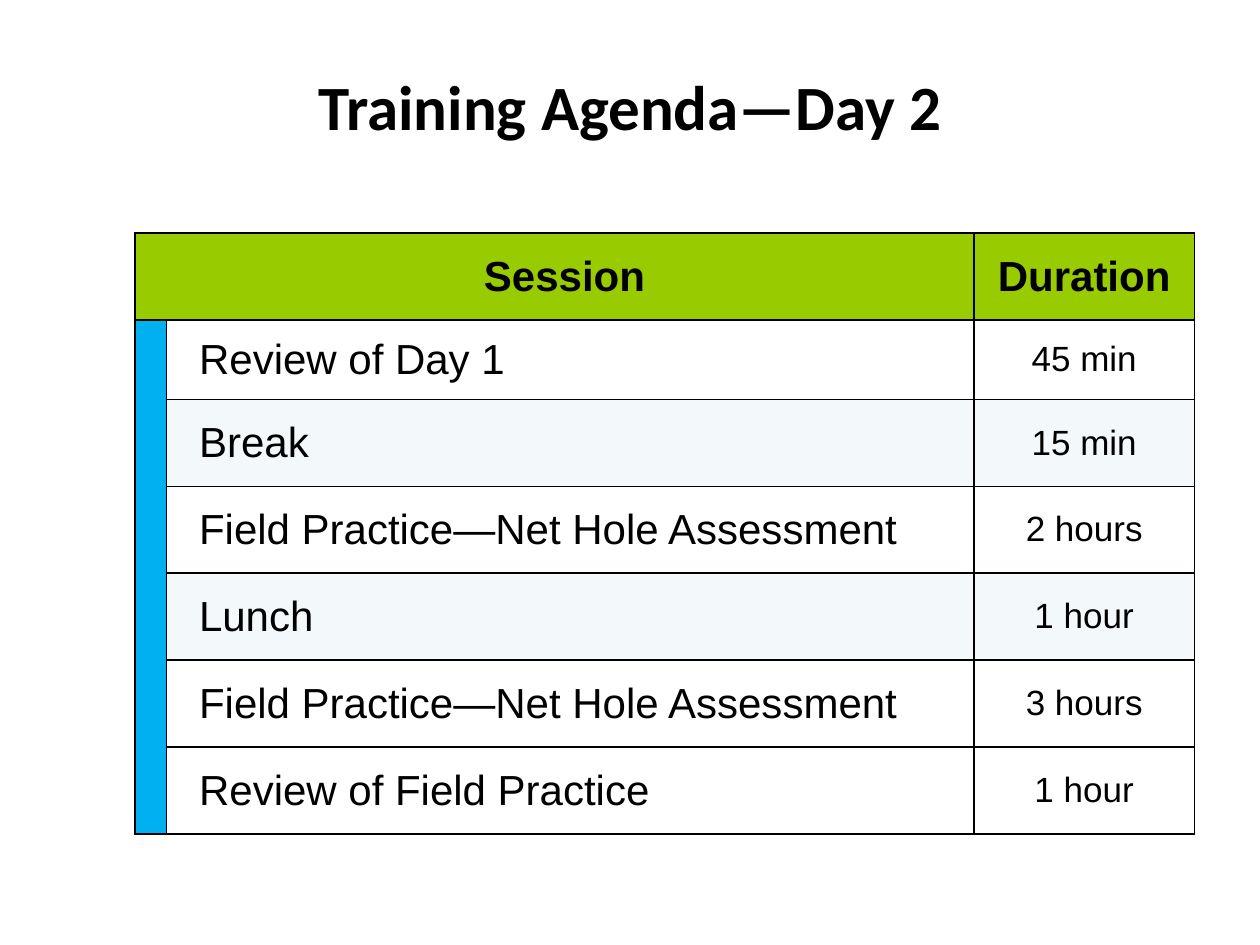
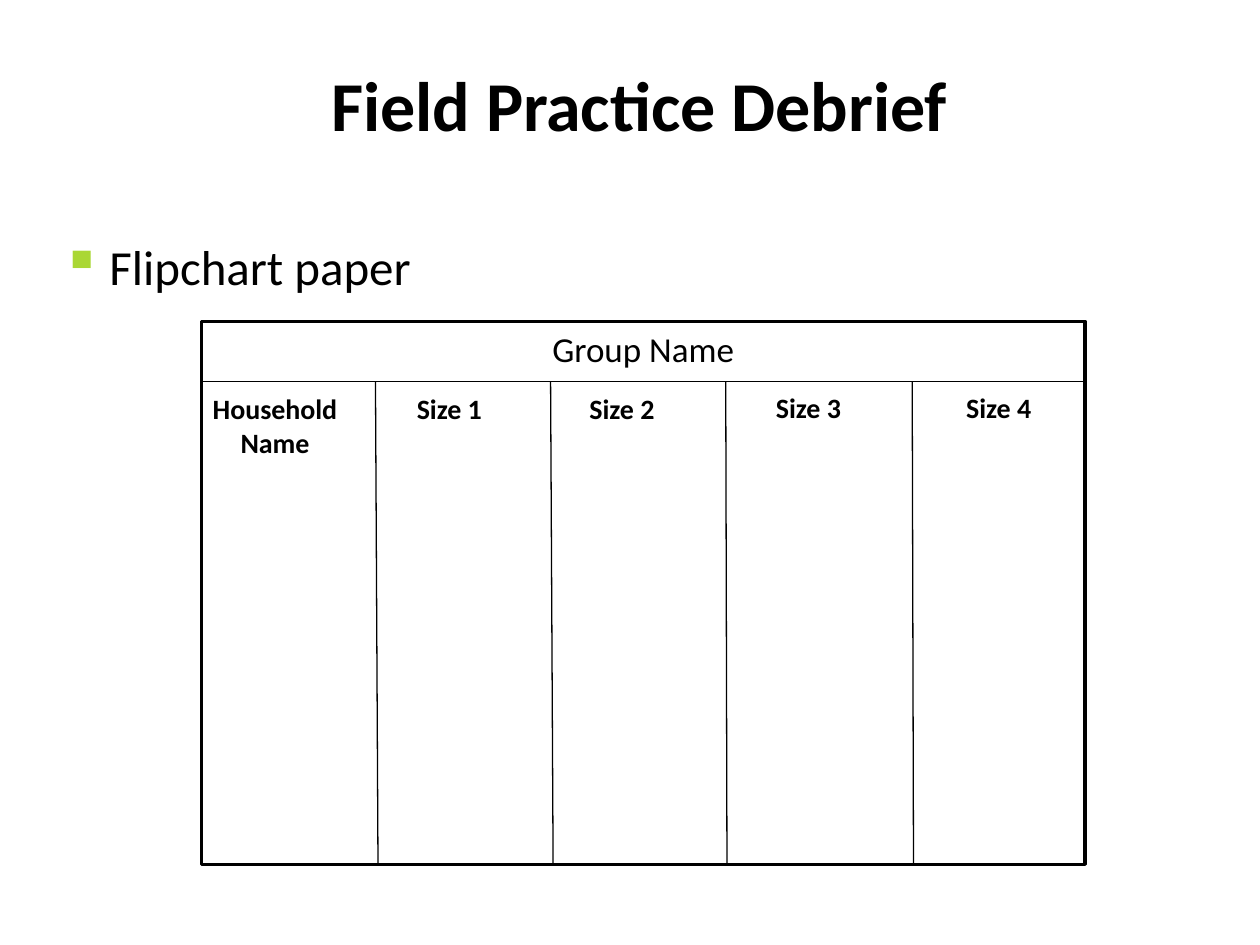
"""Build the training agenda slide and the field practice debrief slide."""
from lxml import etree
from pptx import Presentation
from pptx.dml.color import RGBColor
from pptx.enum.shapes import MSO_CONNECTOR, MSO_SHAPE
from pptx.enum.text import MSO_ANCHOR, MSO_AUTO_SIZE, PP_ALIGN
from pptx.oxml.ns import qn
from pptx.util import Inches, Pt

LEFT, CENTER = PP_ALIGN.LEFT, PP_ALIGN.CENTER
TOP, MIDDLE = MSO_ANCHOR.TOP, MSO_ANCHOR.MIDDLE
GROW = MSO_AUTO_SIZE.SHAPE_TO_FIT_TEXT
RECTANGLE, STRAIGHT = MSO_SHAPE.RECTANGLE, MSO_CONNECTOR.STRAIGHT

COLORS = {
    "ink": "000000",
    "paper": "FFFFFF",
    "header": "99CC00",
    "day_band": "00B0F0",
    "pause": "F3F9FA",
    "bullet": "AAD734",
}
HEADING_FONT, TABLE_FONT = "Calibri", "Arial"

AGENDA = [
    ("Review of Day 1", "45 min"),
    ("Break", "15 min"),
    ("Field Practice—Net Hole Assessment", "2 hours"),
    ("Lunch", "1 hour"),
    ("Field Practice—Net Hole Assessment", "3 hours"),
    ("Review of Field Practice", "1 hour"),
]
PAUSES = ("Break", "Lunch")
AGENDA_COLUMNS = (0.25, 6.41, 1.75)
HEADER_HEIGHT, FIRST_HEIGHT, SESSION_HEIGHT = 0.69, 0.63, 0.69

SHEET_LEFT, SHEET_TOP, SHEET_WIDTH, SHEET_HEIGHT = 1.6, 2.55, 7.01, 4.31
HEADING_RULE = 3.03
DIVIDERS = [(2.98, 3.0), (4.37, 4.39), (5.76, 5.77), (7.24, 7.25)]
SIZE_LABELS = [(3.21, 3.06), (4.58, 3.06), (6.06, 3.05), (7.57, 3.05)]


def color(name):
    """Return the named colour."""
    return RGBColor.from_string(COLORS[name])


def write(frame, text, size, font=HEADING_FONT, bold=False, align=LEFT):
    """Fill a text frame and format all its runs alike."""
    frame.text = text
    for paragraph in frame.paragraphs:
        paragraph.alignment = align
        for run in paragraph.runs:
            run.font.name = font
            run.font.size = Pt(size)
            run.font.bold = bold
            run.font.color.rgb = color("ink")


def add_text(shapes, box, text, size, bold=False, anchor=TOP, wrap=True):
    """Add a text box and return its frame."""
    frame = shapes.add_textbox(*map(Inches, box)).text_frame
    frame.word_wrap = wrap
    frame.vertical_anchor = anchor
    write(frame, text, size, bold=bold)
    return frame


def add_title(slide, box, text, size):
    """Add a bold slide title, centred vertically in its box."""
    add_text(slide.shapes, box, text, size, bold=True, anchor=MIDDLE)


def add_bullet(slide, box, text):
    """Add one line with a square bullet and a hanging indent."""
    paragraph = add_text(slide.shapes, box, text, 28).paragraphs[0]
    paragraph.space_after = Pt(6)
    properties = paragraph._p.get_or_add_pPr()
    properties.set("marL", str(Inches(0.38)))
    properties.set("indent", str(Inches(-0.38)))
    tint = etree.SubElement(properties, qn("a:buClr"))
    etree.SubElement(tint, qn("a:srgbClr"), val=COLORS["bullet"])
    etree.SubElement(properties, qn("a:buSzPct"), val="110000")
    etree.SubElement(properties, qn("a:buChar"), char="▪")


def add_rule(shapes, start, end):
    """Add a thin straight line without a shadow."""
    rule = shapes.add_connector(STRAIGHT, *map(Inches, start + end))
    rule.line.color.rgb = color("ink")
    rule.line.width = Pt(0.75)
    etree.SubElement(rule._element.spPr, qn("a:effectLst"))


def add_column_label(shapes, box, text):
    """Add a bold flipchart column label that fits its text."""
    frame = add_text(shapes, box, text, 16, bold=True, wrap=False)
    frame.auto_size = GROW
    return frame


def style_cell(cell, fill):
    """Give a cell its borders, margins, anchor and fill."""
    properties = cell._tc.get_or_add_tcPr()
    for side in ("lnL", "lnR", "lnT", "lnB"):
        border = etree.SubElement(properties, qn(f"a:{side}"), w=str(Pt(1)))
        solid = etree.SubElement(border, qn("a:solidFill"))
        etree.SubElement(solid, qn("a:srgbClr"), val=COLORS["ink"])
    cell.fill.solid()
    cell.fill.fore_color.rgb = color(fill)
    cell.margin_left = cell.margin_right = Inches(0.07)
    cell.margin_top = cell.margin_bottom = 0
    cell.vertical_anchor = MIDDLE


def write_cell(cell, text, size, bold=False, align=CENTER, indent=0):
    """Write the text of a table cell."""
    write(cell.text_frame, text, size, TABLE_FONT, bold, align)
    properties = cell.text_frame.paragraphs[0]._p.get_or_add_pPr()
    properties.set("marL", str(Inches(indent)))


def add_agenda(slide):
    """Add the agenda table with its header and day band."""
    heights = [HEADER_HEIGHT, FIRST_HEIGHT] + [SESSION_HEIGHT] * (len(AGENDA) - 1)
    agenda = slide.shapes.add_table(
        len(heights), len(AGENDA_COLUMNS), Inches(1.07), Inches(1.85),
        Inches(sum(AGENDA_COLUMNS)), Inches(sum(heights))).table
    for column, width in zip(agenda.columns, AGENDA_COLUMNS):
        column.width = Inches(width)
    for row, height in zip(agenda.rows, heights):
        row.height = Inches(height)

    for cell in agenda.rows[0].cells:
        style_cell(cell, "header")
    write_cell(agenda.cell(0, 0), "Session", 24, bold=True, indent=0.16)
    write_cell(agenda.cell(0, 2), "Duration", 24, bold=True)

    for number, (session, duration) in enumerate(AGENDA, start=1):
        band, name, length = agenda.rows[number].cells
        shade = "pause" if session in PAUSES else "paper"
        style_cell(band, "day_band")
        style_cell(name, shade)
        style_cell(length, shade)
        write_cell(name, session, 24, align=LEFT, indent=0.19)
        write_cell(length, duration, 20)

    agenda.cell(0, 0).merge(agenda.cell(0, 1))
    agenda.cell(1, 0).merge(agenda.cell(len(AGENDA), 0))


def add_flipchart(slide):
    """Add the flipchart sheet with its ruled columns and labels."""
    flipchart = slide.shapes.add_group_shape().shapes
    sheet = flipchart.add_shape(RECTANGLE, *map(
        Inches, (SHEET_LEFT, SHEET_TOP, SHEET_WIDTH, SHEET_HEIGHT)))
    sheet.shadow.inherit = False
    sheet.fill.solid()
    sheet.fill.fore_color.rgb = color("paper")
    sheet.line.color.rgb = color("ink")
    sheet.line.width = Pt(2)
    sheet.text_frame.vertical_anchor = TOP
    write(sheet.text_frame, "Group Name", 20, align=CENTER)

    sheet_bottom = SHEET_TOP + SHEET_HEIGHT
    for upper, lower in DIVIDERS:
        add_rule(flipchart, (upper, HEADING_RULE), (lower, sheet_bottom))
    add_rule(flipchart, (SHEET_LEFT, HEADING_RULE),
             (SHEET_LEFT + SHEET_WIDTH, HEADING_RULE))

    for number, place in enumerate(SIZE_LABELS, start=1):
        add_column_label(flipchart, place + (0.84, 0.37), f"Size {number}")
    household = add_column_label(
        flipchart, (1.59, 3.06, 1.36, 0.64), "Household\nName")
    household.paragraphs[1].alignment = CENTER


def main():
    """Build both slides and save the presentation."""
    deck = Presentation()
    deck.slide_width, deck.slide_height = Inches(10), Inches(7.5)
    blank = deck.slide_layouts[6]

    agenda_slide = deck.slides.add_slide(blank)
    add_title(agenda_slide, (2.43, 0.29, 6.93, 1.09), "Training Agenda—Day 2", 36)
    add_agenda(agenda_slide)

    debrief_slide = deck.slides.add_slide(blank)
    add_title(debrief_slide, (2.53, 0.28, 5.88, 1.09), "Field Practice Debrief", 40)
    add_bullet(debrief_slide, (0.39, 1.83, 9.19, 5.17), "Flipchart paper")
    add_flipchart(debrief_slide)

    deck.save("out.pptx")


if __name__ == "__main__":
    main()
